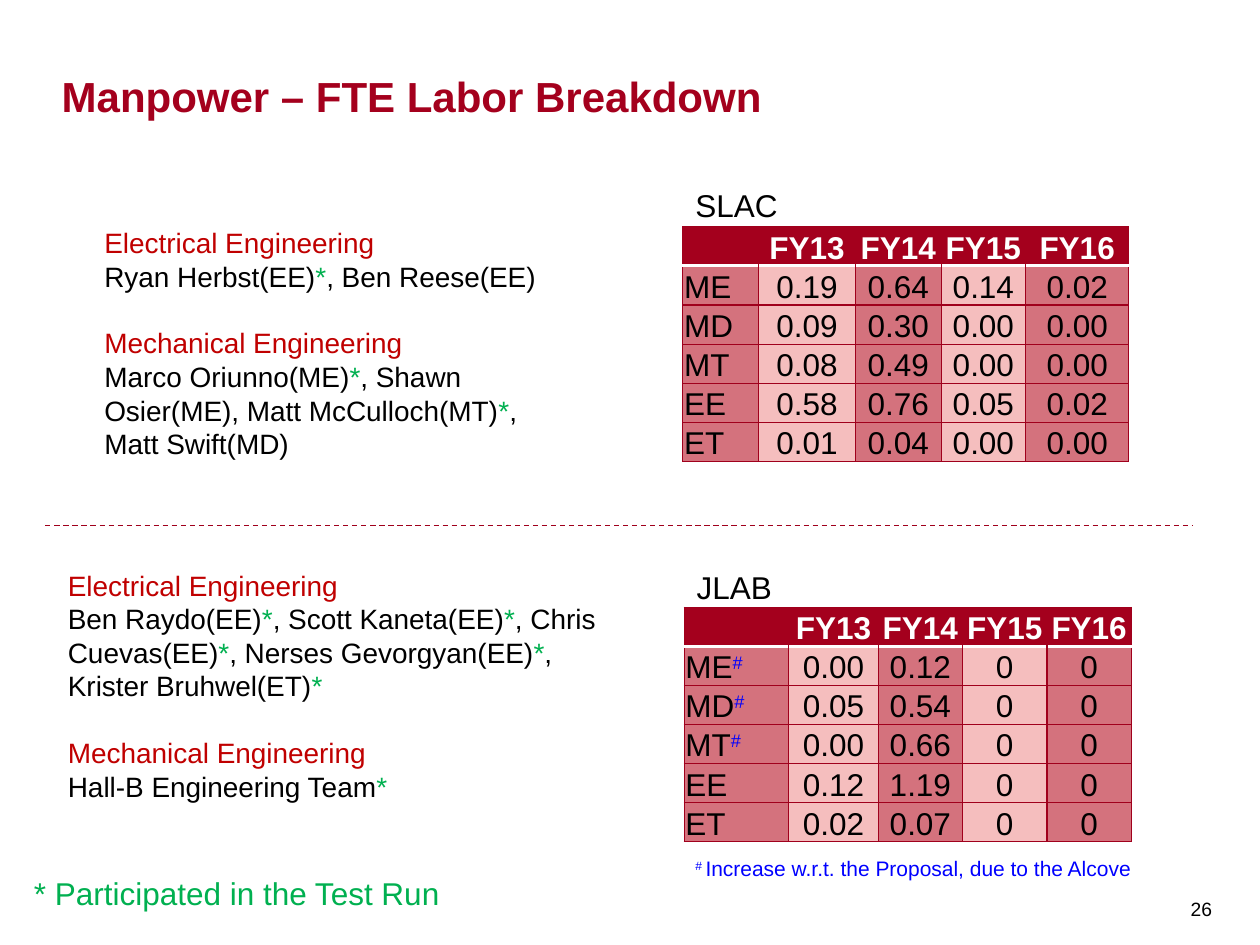
from dataclasses import dataclass

from lxml.etree import SubElement
from pptx import Presentation
from pptx.dml.color import RGBColor
from pptx.enum.dml import MSO_LINE
from pptx.enum.shapes import MSO_CONNECTOR
from pptx.enum.text import MSO_ANCHOR, MSO_AUTO_SIZE, PP_ALIGN
from pptx.oxml.ns import qn
from pptx.util import Emu, Pt

PX = 9144  # 100 px to the inch


@dataclass(frozen=True)
class Theme:
    font: str = "Arial"
    ink: str = "000000"
    paper: str = "FFFFFF"
    brand: str = "A4001D"
    rule: str = "A0001C"
    heading: str = "C00000"
    test_run: str = "00B050"
    note: str = "0000FF"
    band_dark: str = "D4727D"
    band_light: str = "F5BEBE"
    title_size: int = 24
    large: int = 18
    body: int = 16
    small: int = 12
    number: int = 11


def px(length):
    return Emu(length * PX)


def write_text(para, text, *, font, size, color, bold=False,
               mark=None, mark_color=None, raised=False):
    """Add text to para, with every occurrence of mark as a span of its own colour."""
    pieces = text.split(mark) if mark else [text]
    spans = []
    for index, piece in enumerate(pieces):
        if index:
            spans.append((mark, True))
        if piece:
            spans.append((piece, False))
    for words, is_mark in spans:
        span = para.add_run()
        span.text = words
        span.font.name = font
        span.font.size = Pt(size)
        span.font.bold = bold
        span.font.color.rgb = RGBColor.from_string(mark_color if is_mark else color)
        if is_mark and raised:
            span.font._element.set("baseline", "30000")


def set_border(cell, edge, color, width):
    """Draw one edge (L, R, T or B) of a cell; no colour means no line."""
    line = SubElement(cell._tc.get_or_add_tcPr(), qn(f"a:ln{edge}"), w=str(Pt(width)))
    if color:
        fill = SubElement(line, qn("a:solidFill"))
        SubElement(fill, qn("a:srgbClr"), val=color)
    else:
        SubElement(line, qn("a:noFill"))


class SlideBuilder:
    def __init__(self, page, theme):
        self.page = page
        self.theme = theme

    def frame(self, left, top, width, height, *, wrap=True, grow=True,
              anchor=MSO_ANCHOR.TOP, insets=(10, 5, 10, 5)):
        box = self.page.shapes.add_textbox(px(left), px(top), px(width), px(height))
        frame = box.text_frame
        frame.word_wrap = wrap
        frame.auto_size = MSO_AUTO_SIZE.SHAPE_TO_FIT_TEXT if grow else MSO_AUTO_SIZE.NONE
        frame.vertical_anchor = anchor
        (frame.margin_left, frame.margin_top,
         frame.margin_right, frame.margin_bottom) = map(px, insets)
        return frame

    def label(self, text, left, top, width, height, *, size, color, bold=False,
              mark=None, mark_color=None, raised=False, **layout):
        frame = self.frame(left, top, width, height, **layout)
        write_text(frame.paragraphs[0], text, font=self.theme.font, size=size,
                   color=color, bold=bold, mark=mark, mark_color=mark_color, raised=raised)

    def team(self, groups, left, top, width, height):
        """List each discipline as a heading followed by its people."""
        theme = self.theme
        frame = self.frame(left, top, width, height)
        for index, (discipline, people) in enumerate(groups):
            heading = frame.add_paragraph() if index else frame.paragraphs[0]
            if index:
                heading.space_before = Pt(19)
            write_text(heading, discipline, font=theme.font, size=theme.body,
                       color=theme.heading)
            write_text(frame.add_paragraph(), people, font=theme.font, size=theme.body,
                       color=theme.ink, mark="*", mark_color=theme.test_run)

    def labor_table(self, rows, left, top, widths, row_height=31):
        theme = self.theme
        shape = self.page.shapes.add_table(len(rows), len(widths), px(left), px(top),
                                           px(sum(widths)), px(row_height * len(rows)))
        table = shape.table
        for column, width in zip(table.columns, widths):
            column.width = px(width)
        for row_index, row in enumerate(rows):
            table.rows[row_index].height = px(row_height)
            for column_index, text in enumerate(row):
                self.labor_cell(table.cell(row_index, column_index), text,
                                row_index, column_index, len(widths) - 1)

    def labor_cell(self, cell, text, row, column, last_column):
        theme = self.theme
        header = row == 0
        cell.margin_left = cell.margin_top = cell.margin_right = px(1)
        cell.margin_bottom = 0
        cell.vertical_anchor = MSO_ANCHOR.BOTTOM
        white, red = (theme.paper, 2), (theme.rule, 0.75)
        borders = {
            "L": red if not header or column == 0 else (None, 0),
            "R": red if not header or column == last_column else (None, 0),
            "T": white if row == 1 else red,
            "B": white if header else red,
        }
        for edge, (color, width) in borders.items():
            set_border(cell, edge, color, width)
        band = theme.band_light if column % 2 else theme.band_dark
        cell.fill.solid()
        cell.fill.fore_color.rgb = RGBColor.from_string(theme.brand if header else band)
        para = cell.text_frame.paragraphs[0]
        para.alignment = PP_ALIGN.CENTER if column else PP_ALIGN.LEFT
        para.font.size = Pt(theme.large)
        write_text(para, text, font=theme.font, size=theme.large, bold=header,
                   color=theme.paper if header else theme.ink,
                   mark="#", mark_color=theme.note, raised=True)

    def dashed_rule(self, left, right, top):
        line = self.page.shapes.add_connector(MSO_CONNECTOR.STRAIGHT,
                                              px(left), px(top), px(right), px(top))
        line.line.color.rgb = RGBColor.from_string(self.theme.rule)
        line.line.width = Pt(0.75)
        line.line.dash_style = MSO_LINE.DASH
        SubElement(line._element.spPr, qn("a:effectLst"))


YEARS = ["", "FY13", "FY14", "FY15", "FY16"]
SLAC_LABOR = [
    YEARS,
    ["ME", "0.19", "0.64", "0.14", "0.02"],
    ["MD", "0.09", "0.30", "0.00", "0.00"],
    ["MT", "0.08", "0.49", "0.00", "0.00"],
    ["EE", "0.58", "0.76", "0.05", "0.02"],
    ["ET", "0.01", "0.04", "0.00", "0.00"],
]
JLAB_LABOR = [
    YEARS,
    ["ME#", "0.00", "0.12", "0", "0"],
    ["MD#", "0.05", "0.54", "0", "0"],
    ["MT#", "0.00", "0.66", "0", "0"],
    ["EE", "0.12", "1.19", "0", "0"],
    ["ET", "0.02", "0.07", "0", "0"],
]
SLAC_TEAM = [
    ("Electrical Engineering", "Ryan Herbst(EE)*, Ben Reese(EE)"),
    ("Mechanical Engineering",
     "Marco Oriunno(ME)*, Shawn Osier(ME), Matt McCulloch(MT)*, Matt Swift(MD)"),
]
JLAB_TEAM = [
    ("Electrical Engineering",
     "Ben Raydo(EE)*, Scott Kaneta(EE)*, Chris Cuevas(EE)*, "
     "Nerses Gevorgyan(EE)*, Krister Bruhwel(ET)*"),
    ("Mechanical Engineering", "Hall-B Engineering Team*"),
]


def main():
    deck = Presentation()
    deck.slide_width, deck.slide_height = px(1000), px(750)
    theme = Theme()
    slide = SlideBuilder(deck.slides.add_slide(deck.slide_layouts[6]), theme)

    slide.label("26", 937, 691, 35, 59, size=theme.number, color=theme.ink,
                grow=False, anchor=MSO_ANCHOR.MIDDLE, insets=(8, 6, 8, 5))
    slide.label("Manpower – FTE Labor Breakdown", 49, 14, 886, 82,
                size=theme.title_size, color=theme.brand, bold=True,
                grow=False, anchor=MSO_ANCHOR.BOTTOM, insets=(0, 0, 0, 0))
    slide.label("SLAC", 542, 143, 86, 40, size=theme.large, color=theme.ink, wrap=False)
    slide.label("JLAB", 543, 446, 81, 40, size=theme.large, color=theme.ink, wrap=False)
    slide.labor_table(SLAC_LABOR, 542, 180, (60, 77, 68, 67, 82))
    slide.labor_table(JLAB_LABOR, 543, 482, (83, 71, 67, 67, 67))
    slide.team(SLAC_TEAM, 73, 174, 383, 199)
    slide.label("* Participated in the Test Run", 17, 689, 345, 40,
                size=theme.large, color=theme.test_run, wrap=False)
    slide.team(JLAB_TEAM, 44, 446, 442, 199)
    slide.dashed_rule(36, 946, 417)
    slide.label("# Increase w.r.t. the Proposal, due to the Alcove", 542, 674, 371, 30,
                size=theme.small, color=theme.note, wrap=False,
                mark="# ", mark_color=theme.note, raised=True)

    deck.save("out.pptx")


if __name__ == "__main__":
    main()
